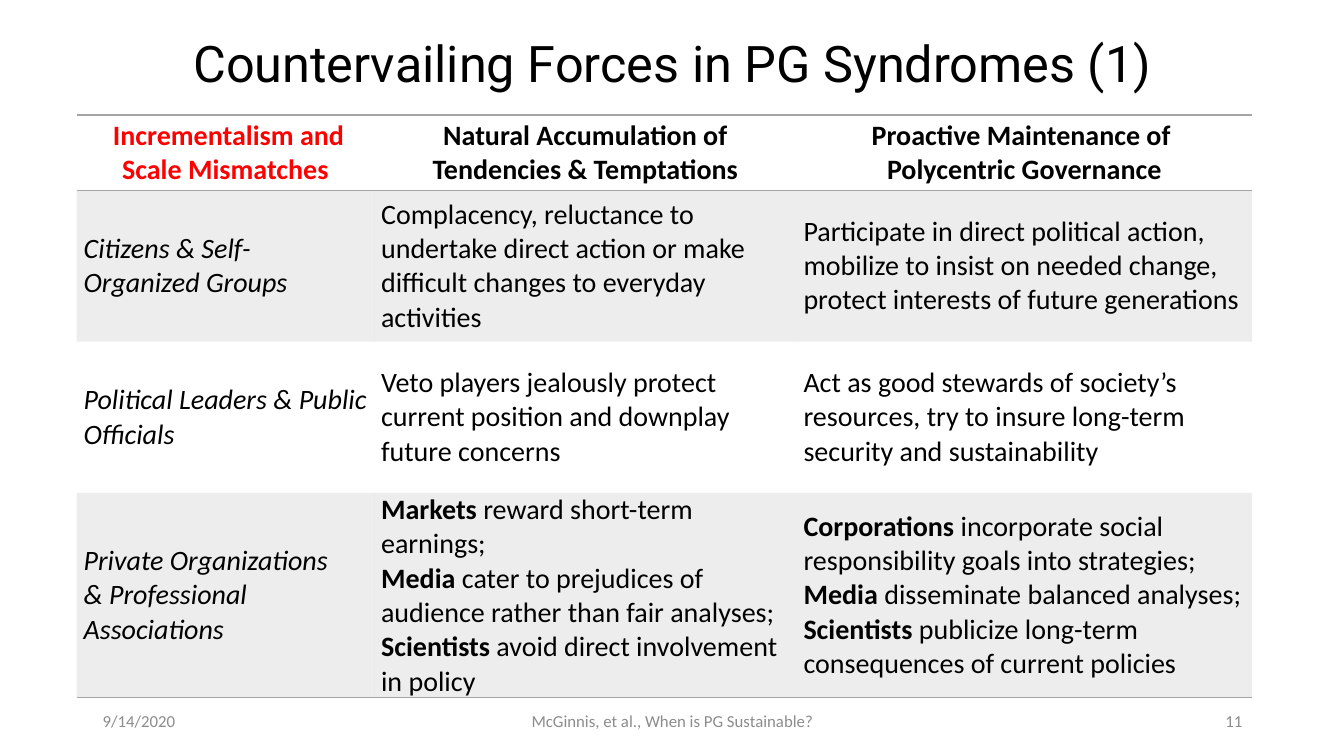
from pptx import Presentation
from pptx.dml.color import RGBColor
from pptx.enum.text import MSO_ANCHOR, PP_ALIGN
from pptx.oxml.ns import qn
from pptx.util import Inches, Pt
from lxml import etree

LEFT, CENTER, RIGHT = PP_ALIGN.LEFT, PP_ALIGN.CENTER, PP_ALIGN.RIGHT
MIDDLE = MSO_ANCHOR.MIDDLE

BLACK = RGBColor(0x00, 0x00, 0x00)
RED = RGBColor(0xFF, 0x00, 0x00)
GREY = RGBColor(0xA5, 0xA5, 0xA5)
FOOTER_GREY = RGBColor(0x8C, 0x8C, 0x8C)

BOLD = {"bold": True}
COL_WIDTHS = [2.95, 4.19, 4.52]
ROW_HEIGHTS = [0.75, 1.5, 1.5, 2.03]

# Each cell is a list of paragraphs, each paragraph a list of (text, format) runs
ROWS = [
    [
        [[(" ", {}), ("Incrementalism and Scale Mismatches", {"color": RED})]],
        [[("Natural Accumulation of Tendencies & Temptations", {})]],
        [[("Proactive Maintenance of ", {})], [("Polycentric Governance", {})]],
    ],
    [
        [[("Citizens & Self-Organized Groups", {})]],
        [[("Complacency, reluctance to undertake direct action or make "
           "difficult changes to everyday activities", {})]],
        [[("Participate in direct political action, mobilize to insist on "
           "needed change, protect interests of future generations", {})]],
    ],
    [
        [[("Political Leaders & Public Officials", {})]],
        [[("Veto players jealously protect current position and downplay "
           "future concerns", {})]],
        [[("Act as good stewards of society’s resources, try to insure "
           "long-term security and sustainability", {})]],
    ],
    [
        [[("Private Organizations", {})], [("& Professional Associations", {})]],
        [
            [("Markets", BOLD), (" reward short-term earnings;", {})],
            [("Media ", BOLD),
             ("cater to prejudices of audience rather than fair analyses; ", {}),
             ("Scientists ", BOLD), ("avoid direct involvement in policy", {})],
        ],
        [
            [("Corporations ", BOLD),
             ("incorporate social responsibility goals into strategies;", {})],
            [("Media ", BOLD), ("disseminate balanced analyses; ", {}),
             ("Scientists ", BOLD),
             ("publicize long-term consequences of current policies", {})],
        ],
    ],
]


def add_run(p, text, size=20, font="Calibri", color=BLACK, bold=False, italic=False):
    r = p.add_run()
    r.text = text
    r.font.size, r.font.name = Pt(size), font
    r.font.bold, r.font.italic = bold, italic
    r.font.color.rgb = color


def add_text(s, text, left, top, width, height, align=LEFT, spacing=1.0, **fmt):
    tf = s.shapes.add_textbox(
        Inches(left), Inches(top), Inches(width), Inches(height)).text_frame
    tf.word_wrap = True
    tf.vertical_anchor = MIDDLE
    p = tf.paragraphs[0]
    p.alignment, p.line_spacing = align, spacing
    add_run(p, text, **fmt)


def set_borders(cell, ruled_sides):
    """Draw a grey rule on the given sides and no line on the others."""
    tc_pr = cell._tc.get_or_add_tcPr()
    for side in ("L", "R", "T", "B"):
        ln = etree.SubElement(tc_pr, qn(f"a:ln{side}"), w=str(Pt(1)))
        if side in ruled_sides:
            fill = etree.SubElement(ln, qn("a:solidFill"))
            etree.SubElement(fill, qn("a:srgbClr"), val=str(GREY))
        else:
            etree.SubElement(ln, qn("a:noFill"))


def set_fill(cell, shaded):
    if not shaded:
        cell.fill.background()
        return
    cell.fill.solid()
    cell.fill.fore_color.rgb = GREY
    color = cell._tc.tcPr.find(f"{qn('a:solidFill')}/{qn('a:srgbClr')}")
    etree.SubElement(color, qn("a:alpha"), val="20000")


def fill_cell(cell, paragraphs, align, **fmt):
    cell.vertical_anchor = MIDDLE
    cell.margin_left = cell.margin_right = Inches(0.07)
    cell.margin_top = cell.margin_bottom = 0
    tf = cell.text_frame
    for i, runs in enumerate(paragraphs):
        p = tf.add_paragraph() if i else tf.paragraphs[0]
        p.alignment = align
        for text, extra in runs:
            add_run(p, text, **{**fmt, **extra})


def add_forces_table(s, left, top):
    table = s.shapes.add_table(
        len(ROW_HEIGHTS), len(COL_WIDTHS), Inches(left), Inches(top),
        Inches(sum(COL_WIDTHS)), Inches(sum(ROW_HEIGHTS))).table
    table.first_row = table.horz_banding = False
    for column, width in zip(table.columns, COL_WIDTHS):
        column.width = Inches(width)
    for row, height in zip(table.rows, ROW_HEIGHTS):
        row.height = Inches(height)

    last = len(ROWS) - 1
    for i, row in enumerate(ROWS):
        header = i == 0
        ruled = ("T" if i in (0, 1) else "") + ("B" if i in (0, last) else "")
        for j, paragraphs in enumerate(row):
            cell = table.cell(i, j)
            set_borders(cell, ruled)
            set_fill(cell, shaded=i % 2 == 1)
            fill_cell(cell, paragraphs, CENTER if header else LEFT,
                      bold=header, italic=j == 0 and not header)


def main():
    prs = Presentation()
    prs.slide_width, prs.slide_height = Inches(13.33), Inches(7.5)
    s = prs.slides.add_slide(prs.slide_layouts[6])

    # Title
    add_text(s, "Countervailing Forces in PG Syndromes (1)", 0.92, 0.4, 11.5, 0.52,
             align=CENTER, spacing=0.9, size=36, font="Roboto")

    # Table
    add_forces_table(s, 0.76, 1.14)

    # Footer
    for text, left, width, align in [
        ("9/14/2020", 0.92, 3, LEFT),
        ("McGinnis, et al., When is PG Sustainable?", 4.42, 4.5, CENTER),
        ("11", 9.42, 3, RIGHT),
    ]:
        add_text(s, text, left, 6.95, width, 0.4, align=align,
                 size=12, color=FOOTER_GREY)

    prs.save("out.pptx")


if __name__ == "__main__":
    main()
